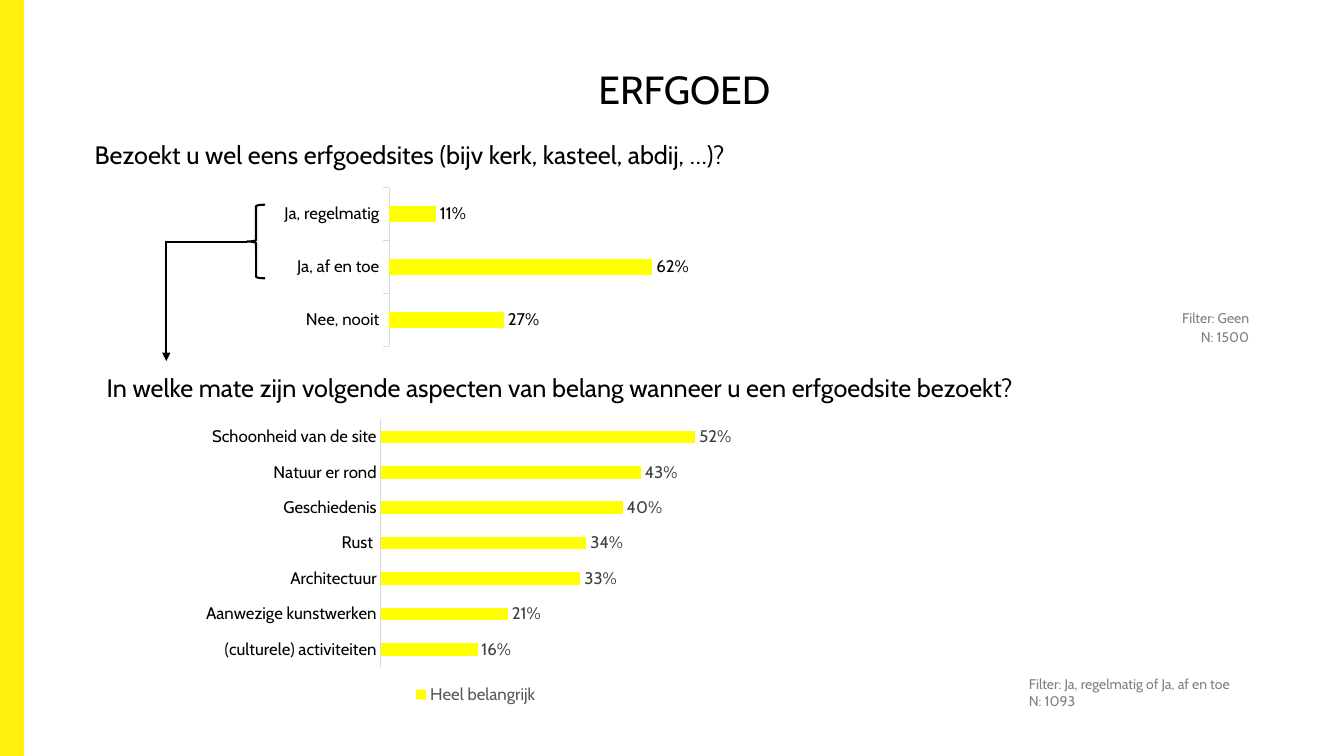
from lxml import etree
from pptx import Presentation
from pptx.chart.data import CategoryChartData
from pptx.dml.color import RGBColor
from pptx.enum import chart as ch, shapes, text
from pptx.oxml import parse_xml
from pptx.oxml.ns import nsdecls, qn
from pptx.util import Pt

YELLOW = RGBColor(0xFF, 0xFF, 0x00)
EDGE_YELLOW = RGBColor(0xFF, 0xF0, 0x10)
BLACK = RGBColor(0, 0, 0)
DARK = RGBColor(0x40, 0x40, 0x40)
MID = RGBColor(0x59, 0x59, 0x59)
GREY = RGBColor(0x80, 0x80, 0x80)
PALE = RGBColor(0xD9, 0xD9, 0xD9)
FONT = "Cabin"


def style_font(font, size, colour):
    font.name = FONT
    font.size = Pt(size)
    font.bold = False
    font.color.rgb = colour


def fill_text(frame, lines, size, colour, align=text.PP_ALIGN.LEFT, gap=0):
    """Write one paragraph per line; gap is the space between them."""
    frame.word_wrap = True
    frame.auto_size = text.MSO_AUTO_SIZE.NONE
    frame.vertical_anchor = text.MSO_ANCHOR.TOP
    for index, line in enumerate(lines):
        paragraph = frame.paragraphs[0] if index == 0 else frame.add_paragraph()
        paragraph.text = line
        paragraph.alignment = align
        paragraph.space_before = Pt(gap if index else 0)
        style_font(paragraph.font, size, colour)


def add_text(slide, box, lines, size, colour, **layout):
    label = slide.shapes.add_textbox(*map(Pt, box))
    fill_text(label.text_frame, lines, size, colour, **layout)


def add_title(slide, box, wording):
    title = slide.shapes.title
    title.left, title.top, title.width, title.height = map(Pt, box)
    fill_text(title.text_frame, [wording], 28, BLACK, align=text.PP_ALIGN.CENTER)


def add_edge_bar(slide, box):
    bar = slide.shapes.add_shape(shapes.MSO_SHAPE.RECTANGLE, *map(Pt, box))
    bar.shadow.inherit = False
    bar.fill.solid()
    bar.fill.fore_color.rgb = EDGE_YELLOW
    bar.line.fill.background()


def add_brace(slide, box):
    brace = slide.shapes.add_shape(shapes.MSO_SHAPE.LEFT_BRACE, *map(Pt, box))
    brace.shadow.inherit = False
    brace.fill.background()
    brace.line.color.rgb = BLACK
    brace.line.width = Pt(1.5)


def add_line(slide, ends, arrow=False):
    line = slide.shapes.add_connector(shapes.MSO_CONNECTOR.STRAIGHT, *map(Pt, ends))
    line.line.color.rgb = BLACK
    line.line.width = Pt(1.5)
    if arrow:
        etree.SubElement(line.line._get_or_add_ln(), qn("a:tailEnd"), type="triangle")
    etree.SubElement(line._element.spPr, qn("a:effectLst"))


def set_plot_layout(chart, x, y, w, h):
    """Fix the inner plot area as fractions of the chart."""
    sizes = "".join(f'<c:{key} val="{value}"/>'
                    for key, value in zip("xywh", (x, y, w, h)))
    layout = parse_xml(
        f'<c:layout {nsdecls("c")}><c:manualLayout><c:layoutTarget val="inner"/>'
        f'<c:xMode val="edge"/><c:yMode val="edge"/>{sizes}</c:manualLayout></c:layout>')
    plot_area = chart._chartSpace.chart.plotArea
    for default in plot_area.findall(qn("c:layout")):
        plot_area.remove(default)
    plot_area.insert(0, layout)


def add_bar_chart(slide, box, series_name, shares, plot_layout, top_value, gap,
                  label_colour, number_format):
    data = CategoryChartData(number_format=number_format)
    data.categories = list(shares)
    data.add_series(series_name, shares.values())
    chart = slide.shapes.add_chart(
        ch.XL_CHART_TYPE.BAR_CLUSTERED, *map(Pt, box), data).chart
    style_font(chart.font, 12, BLACK)
    chart.has_title = False
    chart.has_legend = False
    set_plot_layout(chart, *plot_layout)

    categories = chart.category_axis
    categories.major_tick_mark = ch.XL_TICK_MARK.NONE
    categories.format.line.color.rgb = PALE
    categories.format.line.width = Pt(0.75)
    style_font(categories.tick_labels.font, 12, BLACK)

    values = chart.value_axis
    values.minimum_scale = 0
    values.maximum_scale = top_value
    values.has_major_gridlines = False
    values.visible = False

    plot = chart.plots[0]
    plot.gap_width = gap
    plot.vary_by_categories = False
    bars = plot.series[0]
    bars.format.fill.solid()
    bars.format.fill.fore_color.rgb = YELLOW
    labels = bars.data_labels
    labels.show_value = True
    labels.position = ch.XL_LABEL_POSITION.OUTSIDE_END
    labels.number_format = number_format
    labels.number_format_is_linked = False
    style_font(labels.font, 12, label_colour)
    return chart


def add_visit_chart(slide):
    shares = {"Ja, regelmatig": 0.11, "Ja, af en toe": 0.62, "Nee, nooit": 0.27}
    chart = add_bar_chart(slide, (72, 130.3, 606.2, 126), "Series 1", shares,
                          (0.34, 0.03, 0.5, 0.9), 1, 219, BLACK, "###0%")
    chart.category_axis.reverse_order = True
    chart.category_axis.major_tick_mark = ch.XL_TICK_MARK.OUTSIDE


def add_aspect_chart(slide):
    shares = {"(culturele) activiteiten": 0.16, "Aanwezige kunstwerken": 0.21,
              "Architectuur": 0.33, "Rust ": 0.34, "Geschiedenis": 0.4,
              "Natuur er rond": 0.43, "Schoonheid van de site": 0.52}
    chart = add_bar_chart(slide, (140.4, 295.2, 398.9, 211), "Heel belangrijk", shares,
                          (0.33, 0.02, 0.65, 0.84), 0.6, 182, DARK, "0%")
    chart.has_legend = True
    chart.legend.position = ch.XL_LEGEND_POSITION.BOTTOM
    chart.legend.include_in_layout = False
    style_font(chart.legend.font, 12, MID)


def main():
    deck = Presentation()
    deck.slide_width, deck.slide_height = Pt(960), Pt(540)
    slide = deck.slides.add_slide(deck.slide_layouts[5])

    add_edge_bar(slide, (0, 0, 17.3, 540))
    add_title(slide, (17.3, 43.2, 943, 90), "ERFGOED")

    add_text(slide, (60.5, 95.8, 882, 34),
             ["Bezoekt u wel eens erfgoedsites (bijv kerk, kasteel, abdij, …)?"], 18, BLACK)
    add_visit_chart(slide)
    add_text(slide, (625, 217.4, 274.3, 38), ["Filter: Geen", "N: 1500"], 10, GREY,
             align=text.PP_ALIGN.RIGHT, gap=2)

    add_text(slide, (69.1, 262.1, 750, 29),
             ["In welke mate zijn volgende aspecten van belang "
              "wanneer u een erfgoedsite bezoekt?"], 18, BLACK)
    add_aspect_chart(slide)
    add_text(slide, (727.9, 478.8, 201.6, 31.7),
             ["Filter: Ja, regelmatig of Ja, af en toe", "N: 1093"], 10, GREY)

    add_brace(slide, (176.4, 146.2, 13, 52.6))
    add_line(slide, (118.8, 172.8, 118.8, 257.8), arrow=True)
    add_line(slide, (118.1, 172.8, 176.4, 172.8))

    deck.save("out.pptx")


if __name__ == "__main__":
    main()
